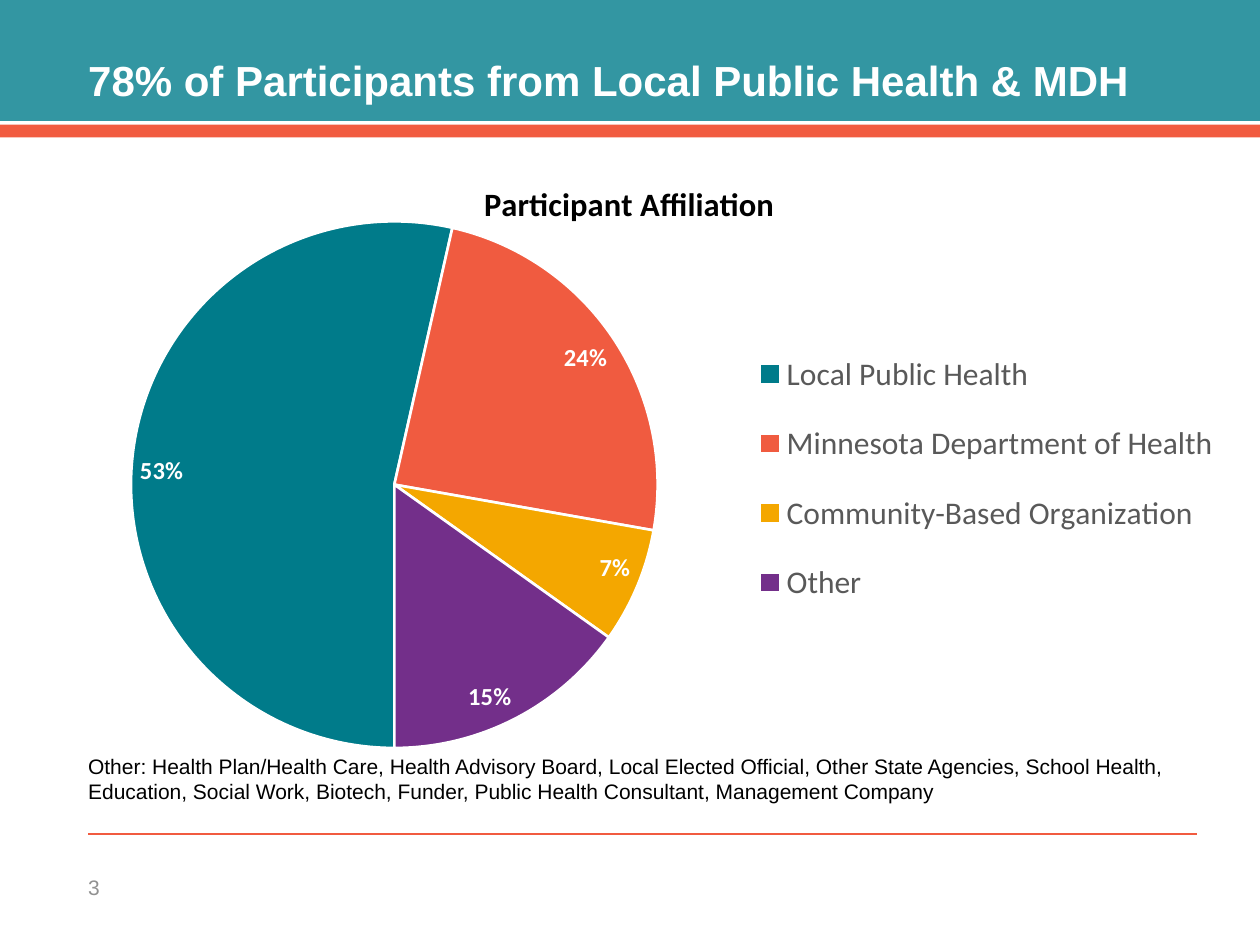
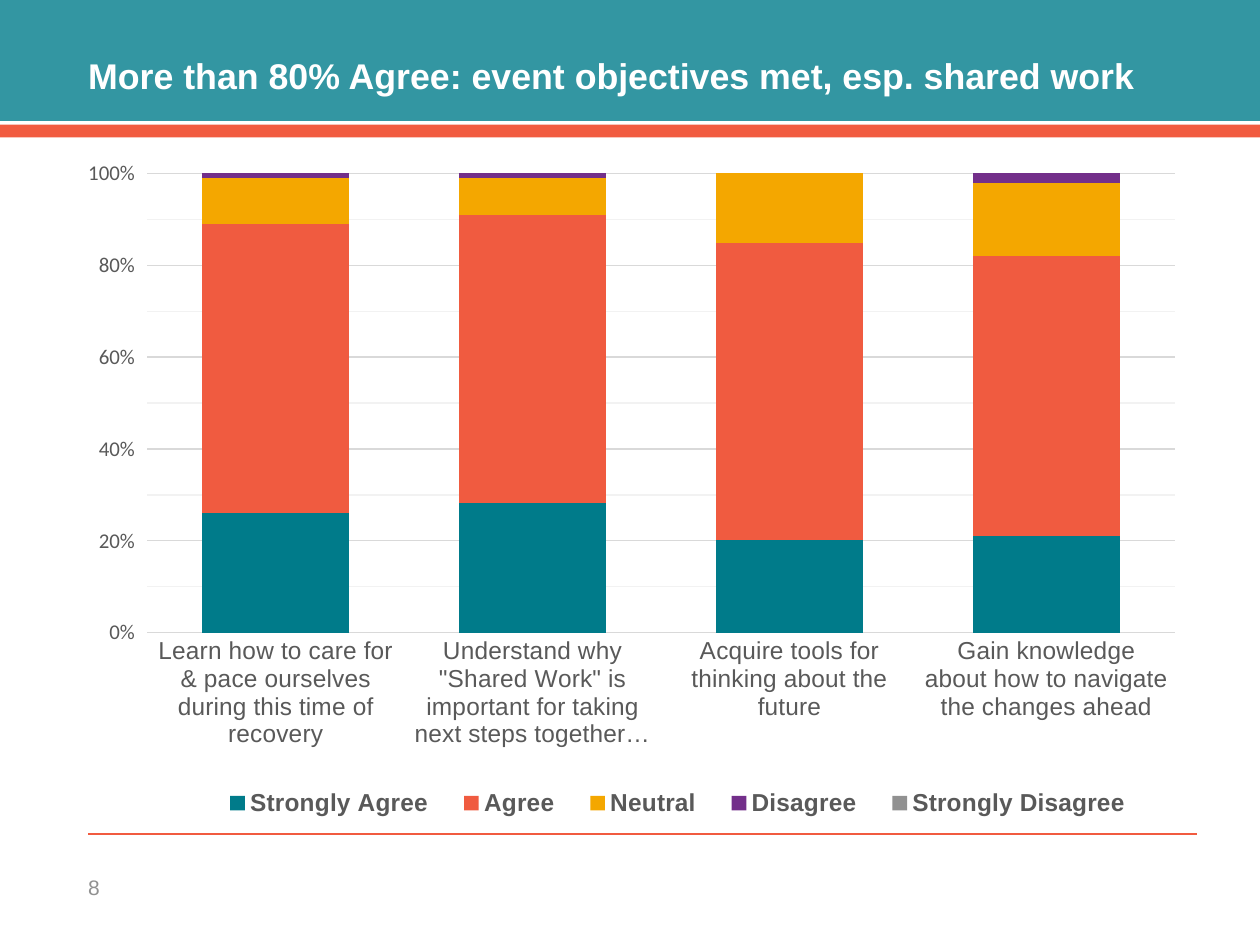
import copy

import pptx
import pptx.chart.data
import pptx.dml.color
import pptx.enum.chart
import pptx.enum.shapes
import pptx.enum.text
import pptx.oxml
import pptx.oxml.ns
import pptx.util
from pptx.util import Inches

TEAL, CORAL, AMBER, PURPLE, GREY = "007B8A", "F05B40", "F4A700", "732F8A", "919191"
BAND, STRIPE = "007C8B", "F15B40"
BLACK, WHITE, DARK, GRID, FAINT = "000000", "FFFFFF", "595959", "D9D9D9", "F2F2F2"
LEFT, WIDTH = 0.7, 8.8
qn = pptx.oxml.ns.qn
chart_type = pptx.enum.chart.XL_CHART_TYPE
legend_position = pptx.enum.chart.XL_LEGEND_POSITION
tick_mark = pptx.enum.chart.XL_TICK_MARK
anchor = pptx.enum.text.MSO_ANCHOR


def paint(fill, color):
    """Give a fill (of a shape, line or font) one solid colour."""
    fill.solid()
    fill.fore_color.rgb = pptx.dml.color.RGBColor.from_string(color)


def place(part, **fractions):
    """Fix a chart part at fractions (x, y, w, h) of the chart's size."""
    for old in part.findall(qn("c:layout")):
        part.remove(old)
    layout = pptx.oxml.parse_xml(f"<c:layout {pptx.oxml.ns.nsdecls('c')}/>")
    manual = layout.makeelement(qn("c:manualLayout"))
    layout.append(manual)
    entries = [("xMode", "edge"), ("yMode", "edge"), *fractions.items()]
    if part.tag == qn("c:plotArea"):
        entries.insert(0, ("layoutTarget", "inner"))
    for name, value in entries:
        manual.append(manual.makeelement(qn(f"c:{name}"), {"val": str(value)}))
    overlay = part.find(qn("c:overlay"))
    part.insert(0 if overlay is None else part.index(overlay), layout)


deck = pptx.Presentation()
deck.slide_width, deck.slide_height = Inches(10), Inches(7.5)
fonts = []  # pairs of a font and its (name, size, colour, bold)

# Title, bands, rule and page number of both slides
slides = []
for title_text, title_size, number in [
    ("78% of Participants from Local Public Health & MDH", 24, "3"),
    ("More than 80% Agree: event objectives met, esp. shared work", 20.4, "8"),
]:
    slide = deck.slides.add_slide(deck.slide_layouts[5])
    slides.append(slide)
    for top, height, color in [(0, 0.96, BAND), (0.99, 0.1, STRIPE)]:
        band = slide.shapes.add_shape(
            pptx.enum.shapes.MSO_SHAPE.RECTANGLE,
            Inches(0), Inches(top), Inches(10), Inches(height))
        band.shadow.inherit = False
        band.line.fill.background()
        paint(band.fill, color)
        if color == BAND:
            tint = band._element.spPr.find(".//" + qn("a:srgbClr"))
            tint.append(tint.makeelement(qn("a:alpha"), {"val": "80000"}))

    rule = slide.shapes.add_connector(
        pptx.enum.shapes.MSO_CONNECTOR.STRAIGHT,
        Inches(LEFT), Inches(6.62), Inches(LEFT + WIDTH), Inches(6.62))
    rule.line.width = pptx.util.Pt(1)
    paint(rule.line.fill, STRIPE)
    properties = rule._element.spPr
    properties.append(properties.makeelement(qn("a:effectLst")))

    title = slide.shapes.title
    slide.shapes._spTree.append(title._element)  # in front of the band
    title.left, title.top = Inches(LEFT), Inches(0.43)
    title.width, title.height = Inches(WIDTH), Inches(0.48)
    page = slide.shapes.add_textbox(Inches(LEFT), Inches(6.84), Inches(0.5), Inches(0.4))
    boxes = [(title, title_text, anchor.TOP, ("Arial", title_size, WHITE, True)),
             (page, number, anchor.MIDDLE, ("Arial", 12, GREY, False))]
    if number == "3":
        note = slide.shapes.add_textbox(
            Inches(LEFT), Inches(5.98), Inches(WIDTH), Inches(0.53))
        note_text = (
            "Other: Health Plan/Health Care, Health Advisory Board, Local Elected Official, "
            "Other State Agencies, School Health, Education, Social Work, Biotech, Funder, "
            "Public Health Consultant, Management Company")
        boxes.append((note, note_text, anchor.TOP, ("Arial", 12, BLACK, False)))
    for box, text, vertical, look in boxes:
        frame = box.text_frame
        frame_format = {
            "margin_left": 0, "margin_right": 0, "margin_top": 0, "margin_bottom": 0,
            "word_wrap": True, "vertical_anchor": vertical,
            "auto_size": pptx.enum.text.MSO_AUTO_SIZE.NONE}
        for name, value in frame_format.items():
            setattr(frame, name, value)
        para = frame.paragraphs[0]
        para.alignment = pptx.enum.text.PP_ALIGN.LEFT
        span = para.add_run()
        span.text = text
        fonts.append((span.font, look))

# Pie of affiliations
affiliations = [
    ("Local Public Health", 53, TEAL),
    ("Minnesota Department of Health", 24, CORAL),
    ("Community-Based Organization", 7, AMBER),
    ("Other", 15, PURPLE),
]
data = pptx.chart.data.CategoryChartData()
data.categories = [name for name, share, color in affiliations]
data.add_series("Participant Affiliation", [share for name, share, color in affiliations])
pie = slides[0].shapes.add_chart(
    chart_type.PIE, Inches(0.28), Inches(0.98), Inches(9.5), Inches(5.12), data).chart
pie.has_title = True
heading = pie.chart_title.text_frame.paragraphs[0].add_run()
heading.text = "Participant Affiliation"
place(pie.chart_title._element, x=0.37, y=0.08)
place(pie._chartSpace.chart.plotArea, x=0.08, y=0.15, w=0.44, h=0.82)

plot = pie.plots[0]
plot.vary_by_categories = True
for index, (name, share, color) in enumerate(affiliations):
    wedge = plot.series[0].points[index].format
    paint(wedge.fill, color)
    paint(wedge.line.fill, WHITE)
    wedge.line.width = pptx.util.Pt(1.5)
plot.has_data_labels = True
labels = plot.data_labels
label_format = {
    "show_value": True, "show_percentage": False,
    "number_format": '0"%"', "number_format_is_linked": False,
    "position": pptx.enum.chart.XL_LABEL_POSITION.INSIDE_END}
for name, value in label_format.items():
    setattr(labels, name, value)
for old in plot._element.findall(qn("c:firstSliceAng")):
    plot._element.remove(old)
plot._element.append(plot._element.makeelement(qn("c:firstSliceAng"), {"val": "180"}))

# Stacked columns of answers per objective
data = pptx.chart.data.CategoryChartData()
data.categories = [
    "Learn how to care for & pace ourselves during this time of recovery",
    'Understand why "Shared Work" is important for taking next steps together…',
    "Acquire tools for thinking about the future",
    "Gain knowledge about how to navigate the changes ahead",
]
answers = [
    ("Strongly Agree", (26, 28, 20, 21), TEAL),
    ("Agree", (63, 62, 64, 61), CORAL),
    ("Neutral", (10, 8, 15, 16), AMBER),
    ("Disagree", (1, 1, 0, 2), PURPLE),
    ("Strongly Disagree", (0, 0, 0, 0), GREY),
]
for name, shares, color in answers:
    data.add_series(name, shares)
columns = slides[1].shapes.add_chart(
    chart_type.COLUMN_STACKED_100,
    Inches(LEFT), Inches(0.73), Inches(WIDTH), Inches(5.88), data).chart
columns.has_title = False
place(columns._chartSpace.chart.plotArea, x=0.05, y=0.11, w=0.93, h=0.62)
plot = columns.plots[0]
plot.vary_by_categories = False
plot.gap_width, plot.overlap = 75, 100
for series, (name, shares, color) in zip(plot.series, answers):
    paint(series.format.fill, color)

category_axis, value_axis = columns.category_axis, columns.value_axis
category_axis.major_tick_mark = tick_mark.NONE
axis_format = {
    "minimum_scale": 0, "maximum_scale": 1, "major_unit": 0.2, "minor_unit": 0.1,
    "has_major_gridlines": True, "has_minor_gridlines": True,
    "major_tick_mark": tick_mark.OUTSIDE, "minor_tick_mark": tick_mark.NONE}
for name, value in axis_format.items():
    setattr(value_axis, name, value)
value_axis.tick_labels.number_format = "0%"
value_axis.tick_labels.number_format_is_linked = False
value_axis.format.line.fill.background()
for part in (category_axis, value_axis.major_gridlines):
    paint(part.format.line.fill, GRID)
    part.format.line.width = pptx.util.Pt(0.75)
# Minor gridlines take the line of the major ones in a fainter colour
major, minor = [value_axis._element.find(qn(f"c:{kind}Gridlines")) for kind in ("major", "minor")]
minor.append(copy.deepcopy(major.find(qn("c:spPr"))))
minor.find(".//" + qn("a:srgbClr")).set("val", FAINT)

# Legends and fonts
for chart, position, spot in [
    (pie, legend_position.RIGHT, {"x": 0.6, "y": 0.31, "w": 0.39, "h": 0.48}),
    (columns, legend_position.BOTTOM, {"x": 0.1, "y": 0.93, "w": 0.86, "h": 0.06}),
]:
    chart.has_legend = True
    chart.legend.position = position
    chart.legend.include_in_layout = False
    place(chart.legend._element, **spot)
    fonts.append((chart.font, ("Calibri", 10, BLACK, False)))

fonts += [
    (heading.font, ("Calibri", 18.6, BLACK, True)),
    (labels.font, ("Calibri", 14, WHITE, True)),
    (pie.legend.font, ("Calibri", 18, DARK, False)),
    (columns.legend.font, ("Arial", 14, DARK, True)),
    (category_axis.tick_labels.font, ("Arial", 14, DARK, False)),
    (value_axis.tick_labels.font, ("Calibri", 12, DARK, False)),
]
for font, (family, size, color, bold) in fonts:
    font_format = {"name": family, "size": pptx.util.Pt(size), "bold": bold}
    for name, value in font_format.items():
        setattr(font, name, value)
    paint(font.fill, color)

deck.save("out.pptx")
